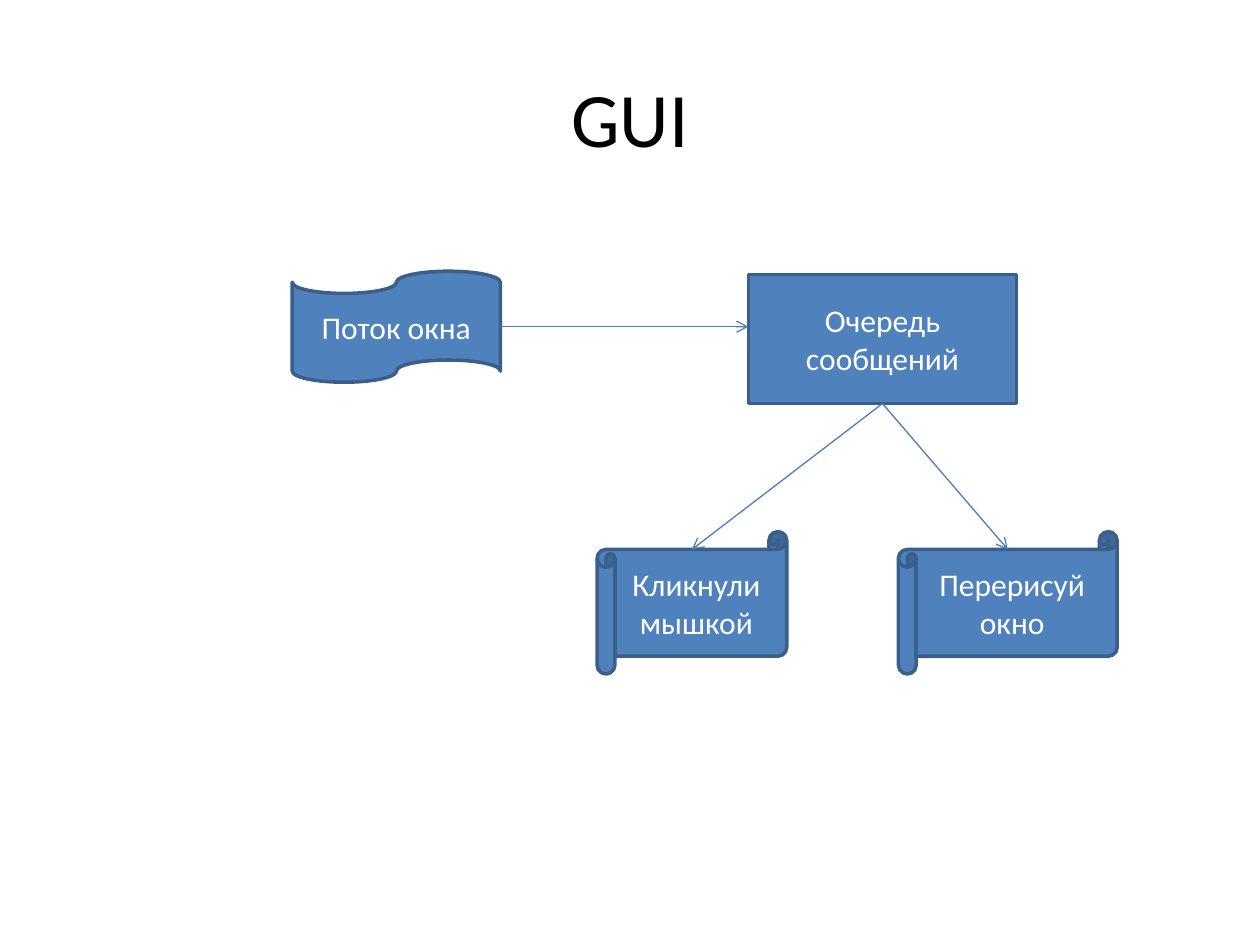
from pptx import Presentation
from pptx.dml.color import RGBColor
from pptx.enum.shapes import MSO_CONNECTOR, MSO_SHAPE
from pptx.enum.text import MSO_ANCHOR, PP_ALIGN
from pptx.oxml.ns import qn
from pptx.util import Pt
from lxml.etree import SubElement

HUES = {"ink": "000000", "text": "FFFFFF", "fill": "4F81BD",
        "edge": "3A5F8C", "line": "4B7EBC"}


def hue(name):
    return RGBColor.from_string(HUES[name])


def write(shape, text, size, tint):
    frame = shape.text_frame
    frame.word_wrap = True
    frame.vertical_anchor = MSO_ANCHOR.MIDDLE
    para = frame.paragraphs[0]
    para.alignment = PP_ALIGN.CENTER
    run = para.add_run()
    run.text = text
    run.font.name = "Calibri"
    run.font.size = Pt(size)
    run.font.color.rgb = hue(tint)


def add_node(slide, kind, text, left, top, width, height):
    node = slide.shapes.add_shape(kind, Pt(left), Pt(top), Pt(width), Pt(height))
    node.shadow.inherit = False
    node.fill.solid()
    node.fill.fore_color.rgb = hue("fill")
    node.line.color.rgb = hue("edge")
    node.line.width = Pt(2)
    write(node, text, 18, "text")
    return node


def add_arrow(slide, start, end):
    arrow = slide.shapes.add_connector(MSO_CONNECTOR.STRAIGHT, *start, *end)
    arrow.line.color.rgb = hue("line")
    arrow.line.width = Pt(0.75)
    SubElement(arrow.line._get_or_add_ln(), qn("a:tailEnd"), type="arrow")
    SubElement(arrow._element.spPr, qn("a:effectLst"))
    return arrow


def add_title(slide, left, top, width, height):
    box = slide.shapes.add_textbox(Pt(left), Pt(top), Pt(width), Pt(height))
    write(box, "GUI", 44, "ink")


def add_flow(slide, left, top, width, height):
    queue = add_node(slide, MSO_SHAPE.RECTANGLE, "Очередь сообщений",
                     left + 260.6, top + 2, 153.4, 73.6)
    tape = add_node(slide, MSO_SHAPE.FLOWCHART_PUNCHED_TAPE, "Поток окна",
                    left, top, 119, 63.4)
    mid = tape.top + tape.height // 2
    add_arrow(slide, (tape.left + tape.width, mid), (queue.left, mid))

    foot = (queue.left + queue.width // 2, queue.top + queue.height)
    deep = 81.4
    for text, shift, wide in (("Перерисуй окно", width - 125, 125),
                              ("Кликнули мышкой", 174.2, 108.4)):
        task = add_node(slide, MSO_SHAPE.HORIZONTAL_SCROLL, text,
                        left + shift, top + height - deep, wide, deep)
        head = (task.left + task.width // 2, task.top + task.height // 8)
        arrow = add_arrow(slide, foot, head)
        arrow.begin_connect(queue, 2)


def main():
    deck = Presentation()
    deck.slide_width = Pt(720)
    deck.slide_height = Pt(540)
    slide = deck.slides.add_slide(deck.slide_layouts[6])
    add_title(slide, 36, 21.6, 648, 90)
    add_flow(slide, 167, 155, 471.4, 230.2)
    deck.save("out.pptx")


if __name__ == "__main__":
    main()
